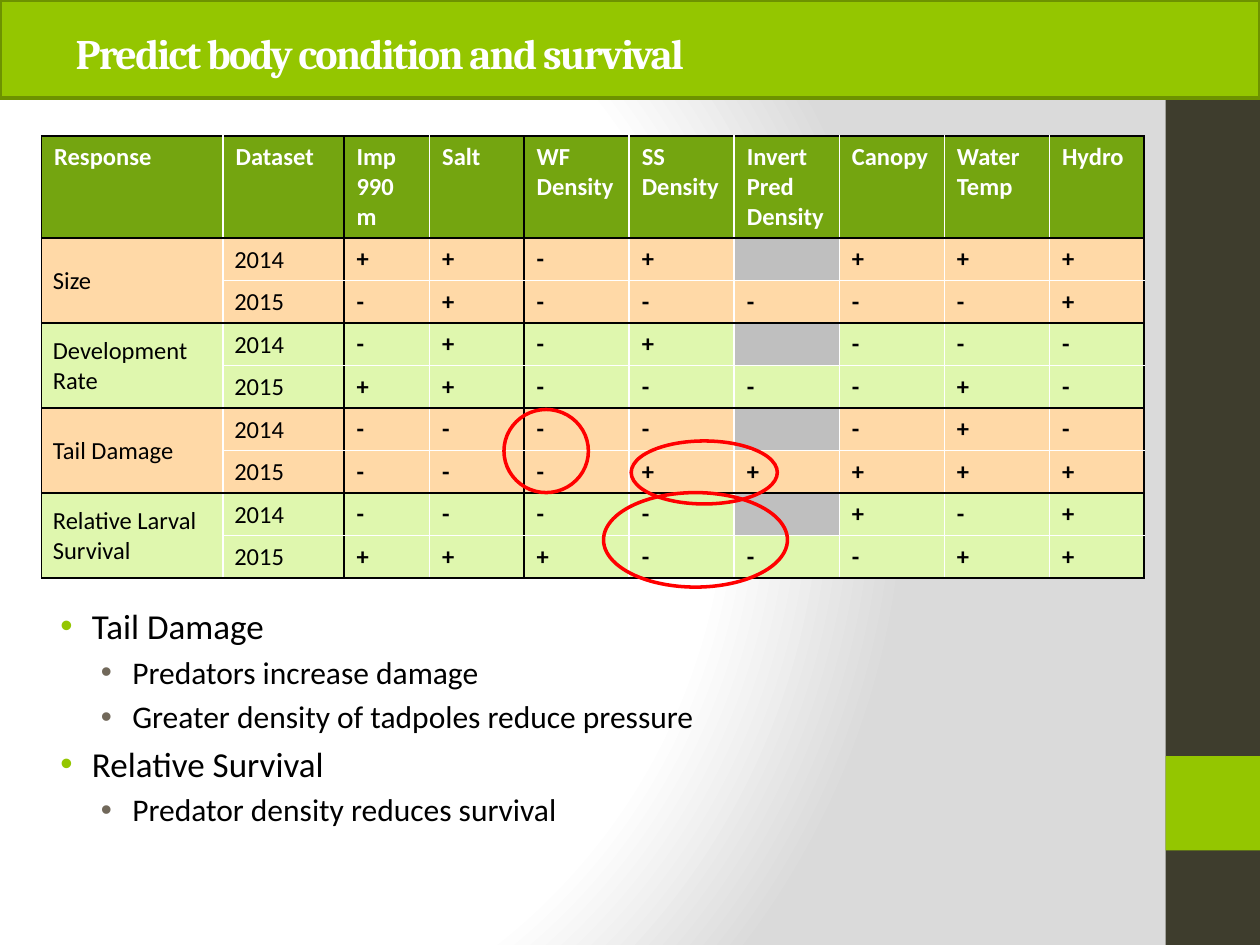
from dataclasses import dataclass

from lxml import etree
from pptx import Presentation
from pptx.dml.color import RGBColor
from pptx.enum.shapes import MSO_SHAPE
from pptx.enum.text import MSO_ANCHOR, MSO_AUTO_SIZE, PP_ALIGN
from pptx.oxml import parse_xml
from pptx.oxml.ns import nsdecls, qn
from pptx.util import Inches, Pt

RECT, OVAL = MSO_SHAPE.RECTANGLE, MSO_SHAPE.OVAL
MIDDLE, LEFT = MSO_ANCHOR.MIDDLE, PP_ALIGN.LEFT
FIXED = MSO_AUTO_SIZE.NONE


@dataclass(frozen=True)
class Theme:
    lime: str = "94C600"
    edge: str = "6D9200"
    dark: str = "3E3D2D"
    head: str = "74A510"
    peach: str = "FFD9A7"
    mint: str = "DFF7AE"
    gap: str = "BFBFBF"
    brown: str = "71685A"
    red: str = "FF0000"
    black: str = "000000"
    white: str = "FFFFFF"
    fade: str = "DADADA"
    serif: str = "Cambria"
    sans: str = "Calibri"
    title: int = 24
    list: tuple = (20, 18)
    cell: int = 14


THEME = Theme()
HEADS = ["Response", "Dataset", "Imp 990 m", "Salt", "WF Density", "SS Density",
         "Invert Pred Density", "Canopy", "Water Temp", "Hydro"]
GROUPS = [
    ("Size", "++-+ +++", "-+-----+"),
    ("Development Rate", "-+-+ ---", "++----+-"),
    ("Tail Damage", "---- -+-", "---+++++"),
    ("Relative Larval Survival", "---- +-+", "+++---++"),
]
POINTS = [
    (0, "Tail Damage"),
    (1, "Predators increase damage"),
    (1, "Greater density of tadpoles reduce pressure"),
    (0, "Relative Survival"),
    (1, "Predator density reduces survival"),
]
RINGS = [(5.01, 3.5, 1.16, 0.5), (4, 3.25, 0.67, 0.66), (4.79, 3.91, 1.46, 0.75)]


def rgb(code):
    return RGBColor.from_string(code)


def style(par, face, size, color, bold=False):
    font = par.font
    font.name, font.size, font.bold = face, Pt(size), bold
    font.color.rgb = rgb(color)


def paint(slide):
    slide.background.fill.gradient()
    old = slide.element.find(".//" + qn("a:gradFill"))
    stops = [(0, THEME.white), (75, THEME.white), (100, THEME.fade)]
    marks = "".join(f'<a:gs pos="{pos * 1000}"><a:srgbClr val="{code}"/></a:gs>'
                    for pos, code in stops)
    new = parse_xml(
        f'<a:gradFill {nsdecls("a")} rotWithShape="1"><a:gsLst>{marks}</a:gsLst>'
        '<a:path path="circle"><a:fillToRect l="20000" t="50000" r="100000" b="50000"/>'
        '</a:path></a:gradFill>')
    old.getparent().replace(old, new)


def add_form(slide, kind, box, fill=None, line=None):
    form = slide.shapes.add_shape(kind, *map(Inches, box))
    form.shadow.inherit = False
    if fill:
        form.fill.solid()
        form.fill.fore_color.rgb = rgb(fill)
    else:
        form.fill.background()
    if line:
        form.line.color.rgb = rgb(line)
        form.line.width = Pt(2)
    else:
        form.line.fill.background()


def place(slide, holder, box):
    slide.shapes.element.append(holder.element)
    holder.left, holder.top, holder.width, holder.height = map(Inches, box)
    frame = holder.text_frame
    frame.auto_size = FIXED
    frame.word_wrap = True
    return frame


def add_title(slide, text):
    frame = place(slide, slide.shapes.title, (0.5, -0.08, 7.78, 1))
    frame.vertical_anchor = MIDDLE
    frame.text = text
    par = frame.paragraphs[0]
    par.alignment = LEFT
    style(par, THEME.serif, THEME.title, THEME.white, True)
    par.runs[0]._r.get_or_add_rPr().set("spc", "-100")


def add_list(slide, points):
    frame = place(slide, slide.placeholders[1], (0.25, 4.75, 9.24, 1.42))
    frame.text = "\n".join(text for _, text in points)
    for par, (level, _) in zip(frame.paragraphs, points):
        par.level = level
        style(par, THEME.sans, THEME.list[level], THEME.black)
        props = par._p.get_or_add_pPr()
        props.set("marL", str(Inches((0.38, 0.7)[level])))
        props.set("indent", str(Inches(-0.25)))
        color = (THEME.lime, THEME.brown)[level]
        parts = (f'<a:buClr {nsdecls("a")}><a:srgbClr val="{color}"/></a:buClr>',
                 f'<a:buFont {nsdecls("a")} typeface="Arial"/>',
                 f'<a:buChar {nsdecls("a")} char="•"/>')
        last = props.find(qn("a:defRPr"))
        for part in parts:
            last.addprevious(parse_xml(part))


def rule(cell, row, col):
    dark = {
        "lnL": col in (0, 2, 4),
        "lnR": col in (1, 3, 9),
        "lnT": row == 0 or row % 2 == 1,
        "lnB": col == 0 or row % 2 == 0,
    }
    props = cell._tc.get_or_add_tcPr()
    for tag, black in dark.items():
        line = etree.SubElement(props, qn("a:" + tag), w=str(Pt(1)))
        fill = etree.SubElement(line, qn("a:solidFill"))
        etree.SubElement(fill, qn("a:srgbClr"), val=THEME.black if black else THEME.white)


def fill_cell(cell, row, col, text):
    rule(cell, row, col)
    band = (THEME.peach, THEME.mint)[(row - 1) // 2 % 2]
    empty = text == " "
    cell.fill.solid()
    cell.fill.fore_color.rgb = rgb(THEME.head if row == 0 else THEME.gap if empty else band)
    cell.text = text.strip()
    if row and col < 2:
        cell.vertical_anchor = MIDDLE
        cell.margin_left = Inches(0.09)
        cell.margin_top = cell.margin_right = Inches(0.01)
        cell.margin_bottom = 0
    elif empty:
        cell.margin_top = cell.margin_bottom = 0
    color = THEME.black if row else THEME.white
    style(cell.text_frame.paragraphs[0], THEME.sans, THEME.cell, color, row == 0 or col > 1)


def add_grid(slide):
    rows = [HEADS]
    for name, first, second in GROUPS:
        rows += [[name, "2014", *first], ["", "2015", *second]]
    wide = 8.75
    lead, last = [1.44, 0.96, 0.68, 0.75], 0.75
    each = (wide - sum(lead) - last) / 5
    box = map(Inches, (0.33, 1.08, wide, 2.81))
    table = slide.shapes.add_table(len(rows), len(HEADS), *box).table
    table.first_row = table.horz_banding = False
    for col, width in zip(table.columns, lead + [each] * 5 + [last]):
        col.width = Inches(width)
    for i, texts in enumerate(rows):
        table.rows[i].height = Inches(0.3 if i else 0.41)
        for j, text in enumerate(texts):
            fill_cell(table.cell(i, j), i, j, text)
    for top in range(1, len(rows), 2):
        table.cell(top, 0).merge(table.cell(top + 1, 0))


def main():
    deck = Presentation()
    deck.slide_width, deck.slide_height = Inches(10), Inches(7.5)
    slide = deck.slides.add_slide(deck.slide_layouts[1])
    paint(slide)
    add_form(slide, RECT, (9.25, 0, 0.75, 7.5), THEME.dark)
    add_form(slide, RECT, (9.25, 6, 0.75, 0.75), THEME.lime)
    add_grid(slide)
    add_form(slide, RECT, (0, 0, 10, 0.78), THEME.lime, THEME.edge)
    add_title(slide, "Predict body condition and survival")
    add_list(slide, POINTS)
    for box in RINGS:
        add_form(slide, OVAL, box, line=THEME.red)
    deck.save("out.pptx")


if __name__ == "__main__":
    main()
